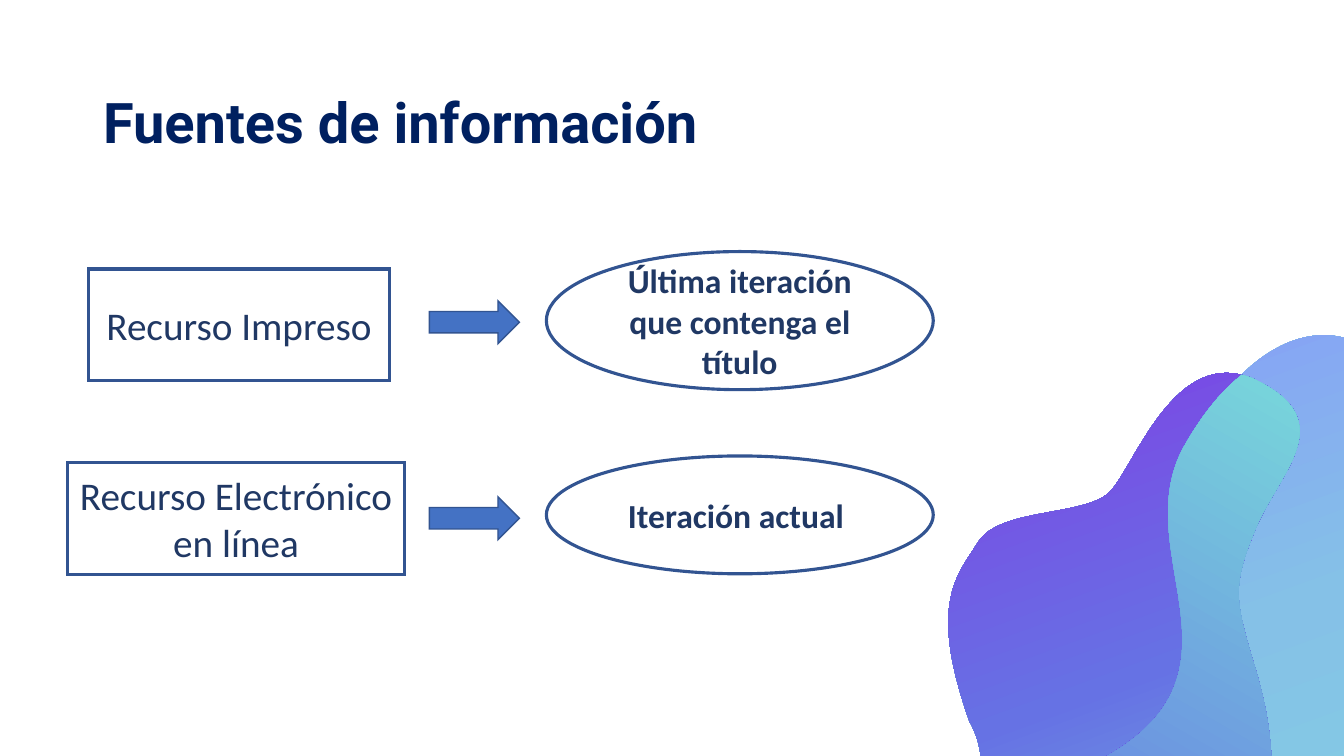
import math

import copy
import lxml.etree
import pptx
import pptx.dml.color
import pptx.enum.shapes
import pptx.enum.text
import pptx.oxml.ns
import pptx.util

Cm = pptx.util.Cm
Pt = pptx.util.Pt
RGBColor = pptx.dml.color.RGBColor
Shape = pptx.enum.shapes.MSO_SHAPE
Align = pptx.enum.text.PP_ALIGN
Anchor = pptx.enum.text.MSO_ANCHOR
qn = pptx.oxml.ns.qn

WHITE = RGBColor(0xFF, 0xFF, 0xFF)
TITLE_NAVY = RGBColor(0x00, 0x20, 0x60)
TEXT_NAVY = RGBColor(0x20, 0x38, 0x64)
OUTLINE_BLUE = RGBColor(0x32, 0x54, 0x91)
ARROW_BLUE = RGBColor(0x44, 0x72, 0xC4)
AQUA = RGBColor(0x80, 0xDE, 0xDE)
SKY = RGBColor(0x85, 0xC1, 0xE7)
PERIWINKLE = RGBColor(0x87, 0x8C, 0xFF)
MINT = RGBColor(0x7C, 0xEF, 0xD8)
INDIGO = RGBColor(0x66, 0x72, 0xE4)
PURPLE = RGBColor(0x88, 0x2B, 0xE5)

# Blob outlines: a start point, then three points for each Bézier curve.
GRID = Cm(2.54)
BLOB_ROTATION = 52.2
SHARED_EDGE = [
    (11.42, 9.26), (13.05, 8.7), (12.6, 7.09), (12.42, 6.52),
    (12.25, 5.94), (12.23, 5.79), (12.46, 5.24),
    (12.69, 4.69), (13.3, 4.19), (12.48, 3.78),
]
LIGHT_BLOB = [
    (10.64, 7.59), (12.88, 6.72), (11.21, 5.42), (11.9, 4.27),
    (12.58, 3.11), (13.36, 3.25), (13.58, 3.49),
    (13.8, 3.72), (13.84, 3.96), (13.51, 4.35),
    (13.18, 4.73), (13.86, 5.47), (14.32, 5.97),
    (14.78, 6.48), (14.96, 7.62), (13.85, 7.84),
    (12.73, 8.06), (12.79, 8.05), (12.25, 8.95),
    (11.71, 9.84), (11.07, 9.81), (11.07, 9.81),
    (11.07, 9.81), (9.99, 9.69), (9.85, 8.81),
    (9.71, 7.92), (10.64, 7.59), (10.64, 7.59),
]
PURPLE_BLOB = SHARED_EDGE + [
    (11.66, 3.37), (11.25, 4.66), (11, 4.89),
    (10.75, 5.12), (9.93, 5.04), (9.71, 5.37),
    (9.5, 5.71), (9.2, 5.97), (9.62, 7.16),
    (9.62, 7.16), (9.97, 7.7), (9.46, 8.32),
    (9.46, 8.32), (9.19, 8.7), (9.4, 8.95),
    (9.4, 8.95), (9.78, 9.82), (11.42, 9.26),
]
OVERLAP = SHARED_EDGE + [
    (12.43, 3.75), (12.37, 3.73), (12.32, 3.72),
    (12.14, 3.86), (11.95, 4.08), (11.77, 4.39),
    (11.08, 5.54), (12.75, 6.85), (10.51, 7.72),
    (10.51, 7.72), (9.58, 8.04), (9.72, 8.93),
    (9.75, 9.1), (9.81, 9.24), (9.89, 9.35),
    (10.19, 9.47), (10.68, 9.51), (11.42, 9.26),
]


def rotate(x, y, degrees):
    """Turn a point clockwise about the slide's top left corner."""
    cosine, sine = math.cos(math.radians(degrees)), math.sin(math.radians(degrees))
    return round(x * cosine - y * sine), round(x * sine + y * cosine)


def lines_to_curves(shape):
    """Join every three line segments of a freeform into one Bézier curve."""
    outline = shape._element.spPr.find(".//" + qn("a:path"))
    lines = outline.findall(qn("a:lnTo"))
    for first in range(0, len(lines), 3):
        curve = lxml.etree.Element(qn("a:cubicBezTo"))
        lines[first].addprevious(curve)
        for line in lines[first:first + 3]:
            curve.append(line[0])
            outline.remove(line)


class SlideBuilder:
    body_font = "Calibri"
    title_font = "Roboto"

    def __init__(self, slide):
        self.slide = slide

    def style_runs(self, text_frame, font_name, size, color, bold):
        for paragraph in text_frame.paragraphs:
            for run in paragraph.runs:
                run.font.name = font_name
                run.font.size = Pt(size)
                run.font.bold = bold
                run.font.color.rgb = color

    def add_title(self, text, left, top, width, height):
        box = self.slide.shapes.add_textbox(Cm(left), Cm(top), Cm(width), Cm(height))
        frame = box.text_frame
        frame.word_wrap = True
        frame.auto_size = pptx.enum.text.MSO_AUTO_SIZE.SHAPE_TO_FIT_TEXT
        frame.margin_left = frame.margin_right = frame.margin_top = frame.margin_bottom = 0
        frame.text = text
        self.style_runs(frame, self.title_font, 40, TITLE_NAVY, True)

    def add_preset(self, kind, left, top, width, height, fill, line_width):
        shape = self.slide.shapes.add_shape(kind, Cm(left), Cm(top), Cm(width), Cm(height))
        shape.shadow.inherit = False
        shape.fill.solid()
        shape.fill.fore_color.rgb = fill
        shape.line.color.rgb = OUTLINE_BLUE
        shape.line.width = Pt(line_width)
        line = shape._element.spPr.find(qn("a:ln"))
        lxml.etree.SubElement(line, qn("a:miter")).set("lim", "800000")
        return shape

    def add_label(self, kind, text, left, top, width, height, size, bold=False):
        shape = self.add_preset(kind, left, top, width, height, WHITE, 2.25)
        frame = shape.text_frame
        frame.word_wrap = True
        frame.vertical_anchor = Anchor.MIDDLE
        frame.text = text
        frame.paragraphs[0].alignment = Align.CENTER
        self.style_runs(frame, self.body_font, size, TEXT_NAVY, bold)

    def add_arrow(self, left, top, width, height):
        self.add_preset(Shape.RIGHT_ARROW, left, top, width, height, ARROW_BLUE, 1)

    def add_blob(self, outline, stops, angle):
        """Draw a rotated, borderless Bézier outline with a three-stop gradient."""
        points = [rotate(x * GRID, y * GRID, -BLOB_ROTATION) for x, y in outline]
        builder = self.slide.shapes.build_freeform(*points[0])
        builder.add_line_segments(points[1:], close=True)
        shape = builder.convert_to_shape()
        lines_to_curves(shape)
        center_x, center_y = rotate(
            shape.left + shape.width / 2, shape.top + shape.height / 2, BLOB_ROTATION)
        shape.left = center_x - shape.width // 2
        shape.top = center_y - shape.height // 2
        shape.rotation = BLOB_ROTATION
        shape.shadow.inherit = False
        shape.line.fill.background()
        shape.fill.gradient()
        shape.fill.gradient_angle = angle + BLOB_ROTATION
        stop_list = shape._element.spPr.find(".//" + qn("a:gsLst"))
        stop_list.append(copy.deepcopy(stop_list[-1]))
        for stop, (position, color) in zip(shape.fill.gradient_stops, stops):
            stop.position = position
            stop.color.rgb = color


def main():
    presentation = pptx.Presentation()
    presentation.slide_width = Cm(33.87)
    presentation.slide_height = Cm(19.05)
    builder = SlideBuilder(presentation.slides.add_slide(presentation.slide_layouts[6]))

    builder.add_title("Fuentes de información", 2.6, 2.21, 21.97, 1.7)
    builder.add_blob(LIGHT_BLOB, [(0, AQUA), (0.54, SKY), (1, PERIWINKLE)], 110)
    builder.add_blob(PURPLE_BLOB, [(0, MINT), (0.51, INDIGO), (1, PURPLE)], 110)
    builder.add_blob(OVERLAP, [(0, PURPLE), (0.19, INDIGO), (1, MINT)], 60)

    sources = [
        ("Recurso Impreso", 2.23, 6.78, 7.59,
         "Última iteración que contenga el título", 6.34, 3.48, 7.58),
        ("Recurso Electrónico en línea", 1.7, 11.65, 8.5,
         "Iteración actual ", 11.49, 2.97, 12.52),
    ]
    for source, left, top, width, iteration, oval_top, oval_height, arrow_top in sources:
        builder.add_label(Shape.RECTANGLE, source, left, top, width, 2.82, 28)
        builder.add_label(Shape.OVAL, iteration, 13.77, oval_top, 9.75, oval_height, 24, True)
        builder.add_arrow(10.82, arrow_top, 2.27, 1.08)

    presentation.save("out.pptx")


if __name__ == "__main__":
    main()
